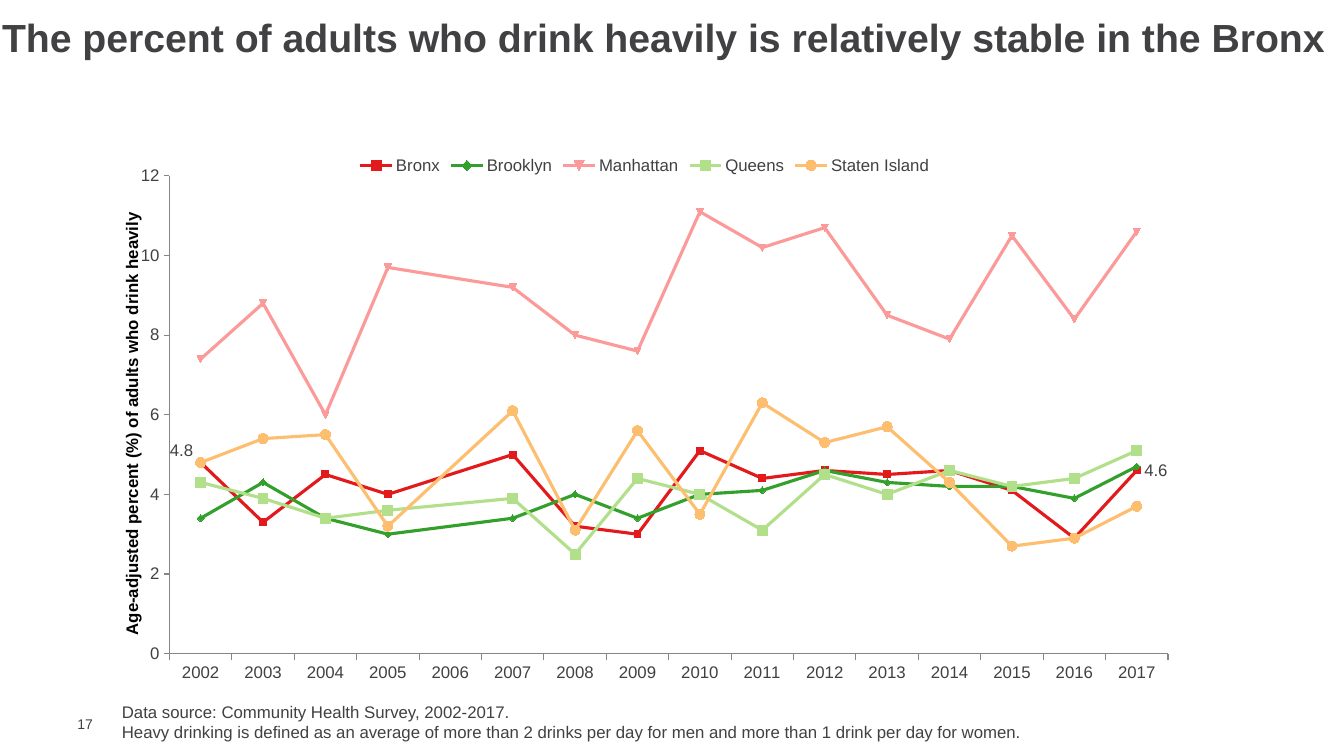
from dataclasses import dataclass

from lxml import etree
from pptx import Presentation
from pptx.chart.data import CategoryChartData
from pptx.dml.color import RGBColor
from pptx.enum.chart import (XL_CHART_TYPE, XL_LABEL_POSITION, XL_LEGEND_POSITION,
                             XL_MARKER_STYLE, XL_TICK_MARK)
from pptx.enum.text import MSO_ANCHOR, PP_ALIGN
from pptx.oxml.ns import qn
from pptx.util import Inches, Pt

AUTO = XL_MARKER_STYLE.AUTOMATIC
SQUARE = XL_MARKER_STYLE.SQUARE
CIRCLE = XL_MARKER_STYLE.CIRCLE
LEFT, RIGHT = XL_LABEL_POSITION.LEFT, XL_LABEL_POSITION.RIGHT
MIDDLE, TOP = MSO_ANCHOR.MIDDLE, MSO_ANCHOR.TOP


@dataclass(frozen=True)
class Theme:
    font: str = "Arial"
    text: str = "414042"
    axis_title: str = "000000"
    axis_line: str = "868686"
    title_size: int = 28
    body_size: int = 12
    number_size: int = 10


theme = Theme()


def write_text(frame, text, size=theme.body_size, color=theme.text, bold=False,
               anchor=None, line_spacing=None):
    """Fill a text frame, one paragraph for each line of text."""
    frame.text = text
    if anchor is not None:
        frame.word_wrap = True
        frame.vertical_anchor = anchor
    for paragraph in frame.paragraphs:
        if anchor is not None:
            paragraph.alignment = PP_ALIGN.LEFT
        if line_spacing:
            paragraph.line_spacing = line_spacing
        for run in paragraph.runs:
            run.font.name = theme.font
            run.font.size = Pt(size)
            run.font.bold = bold
            run.font.color.rgb = RGBColor.from_string(color)


def set_layout(parent, index, **settings):
    """Give a chart part a manual layout, as fractions of the chart."""
    for old in parent.findall(qn("c:layout")):
        parent.remove(old)
    layout = etree.Element(qn("c:layout"))
    manual = etree.SubElement(layout, qn("c:manualLayout"))
    for name, value in settings.items():
        etree.SubElement(manual, qn(f"c:{name}")).set("val", str(value))
    parent.insert(index, layout)


presentation = Presentation()
presentation.slide_width = Inches(13.33)
presentation.slide_height = Inches(7.5)
slide = presentation.slides.add_slide(presentation.slide_layouts[5])

# Title
title = slide.shapes.title
title.left, title.top = Inches(-0.08), Inches(0.17)
title.width, title.height = Inches(13.5), Inches(0.48)
write_text(title.text_frame,
           "The percent of adults who drink heavily is relatively stable in the Bronx",
           size=theme.title_size, bold=True, anchor=MIDDLE, line_spacing=0.8)

# Slide number
number = slide.shapes.add_textbox(Inches(0.67), Inches(7.1), Inches(0.43), Inches(0.17))
number_frame = number.text_frame
number_frame.margin_top = number_frame.margin_bottom = number_frame.margin_right = 0
write_text(number_frame, "17", size=theme.number_size, anchor=MIDDLE)

# Source note
note = slide.shapes.add_textbox(Inches(1.11), Inches(6.91), Inches(9.71), Inches(0.5))
write_text(note.text_frame,
           "Data source: Community Health Survey, 2002-2017.\n"
           "Heavy drinking is defined as an average of more than 2 drinks per day "
           "for men and more than 1 drink per day for women.", anchor=TOP)

# Chart data: name, colour, marker, marker size, values
boroughs = [
    ("Bronx", "E31A1C", AUTO, 5,
     [4.8, 3.3, 4.5, 4, None, 5, 3.2, 3, 5.1, 4.4, 4.6, 4.5, 4.6, 4.1, 2.9, 4.6]),
    ("Brooklyn", "33A02C", AUTO, 5,
     [3.4, 4.3, 3.4, 3, None, 3.4, 4, 3.4, 4, 4.1, 4.6, 4.3, 4.2, 4.2, 3.9, 4.7]),
    ("Manhattan", "FB9A99", AUTO, 5,
     [7.4, 8.8, 6, 9.7, None, 9.2, 8, 7.6, 11.1, 10.2, 10.7, 8.5, 7.9, 10.5, 8.4, 10.6]),
    ("Queens", "B2DF8A", SQUARE, 7,
     [4.3, 3.9, 3.4, 3.6, None, 3.9, 2.5, 4.4, 4, 3.1, 4.5, 4, 4.6, 4.2, 4.4, 5.1]),
    ("Staten Island", "FDBF6F", CIRCLE, 7,
     [4.8, 5.4, 5.5, 3.2, None, 6.1, 3.1, 5.6, 3.5, 6.3, 5.3, 5.7, 4.3, 2.7, 2.9, 3.7]),
]
chart_data = CategoryChartData()
chart_data.categories = [str(year) for year in range(2002, 2018)]
for name, color, marker, marker_size, values in boroughs:
    chart_data.add_series(name, values)

# Chart
chart = slide.shapes.add_chart(XL_CHART_TYPE.LINE_MARKERS, Inches(1.11), Inches(1.44),
                               Inches(10.57), Inches(5.65), chart_data).chart
chart.has_title = False
chart.font.name = theme.font
chart.font.size = Pt(theme.body_size)
chart.font.color.rgb = RGBColor.from_string(theme.text)
chart.has_legend = True
chart.legend.position = XL_LEGEND_POSITION.TOP
chart.legend.include_in_layout = False
chart.legend.font.size = Pt(theme.body_size)
chart_element = chart.element.find(qn("c:chart"))
chart_element.find(qn("c:dispBlanksAs")).set("val", "span")
set_layout(chart_element.find(qn("c:plotArea")), 0, layoutTarget="inner",
           xMode="edge", yMode="edge", x=0.054, y=0.054, w=0.937, h=0.839)

# Series
for series, (name, color, marker, marker_size, values) in zip(chart.plots[0].series, boroughs):
    rgb = RGBColor.from_string(color)
    series.smooth = False
    series.format.line.color.rgb = rgb
    series.format.line.width = Pt(2.25)
    if marker != AUTO:
        series.marker.style = marker
    series.marker.size = marker_size
    series.marker.format.fill.solid()
    series.marker.format.fill.fore_color.rgb = rgb
    series.marker.format.line.color.rgb = rgb

# Labels on the first and last Bronx values
bronx = chart.plots[0].series[0]
for index, position in ((0, LEFT), (15, RIGHT)):
    bronx.points[index].data_label.position = position
first_label = bronx.data_labels._element.find(qn("c:dLbl"))
set_layout(first_label, 1, x=0, y=-0.02)

# Axes
for axis in (chart.category_axis, chart.value_axis):
    axis.has_major_gridlines = False
    axis.major_tick_mark = XL_TICK_MARK.OUTSIDE
    axis.minor_tick_mark = XL_TICK_MARK.NONE
    axis.tick_labels.font.size = Pt(theme.body_size)
    axis.format.line.color.rgb = RGBColor.from_string(theme.axis_line)
    axis.format.line.width = Pt(0.75)
value_axis = chart.value_axis
value_axis.minimum_scale, value_axis.maximum_scale = 0, 12
value_axis.major_unit = 2
write_text(value_axis.axis_title.text_frame,
           "Age-adjusted percent (%) of adults who drink heavily",
           color=theme.axis_title, bold=True)
set_layout(value_axis.axis_title._element, 1, xMode="edge", yMode="edge", x=0.006, y=0.113)

presentation.save("out.pptx")
